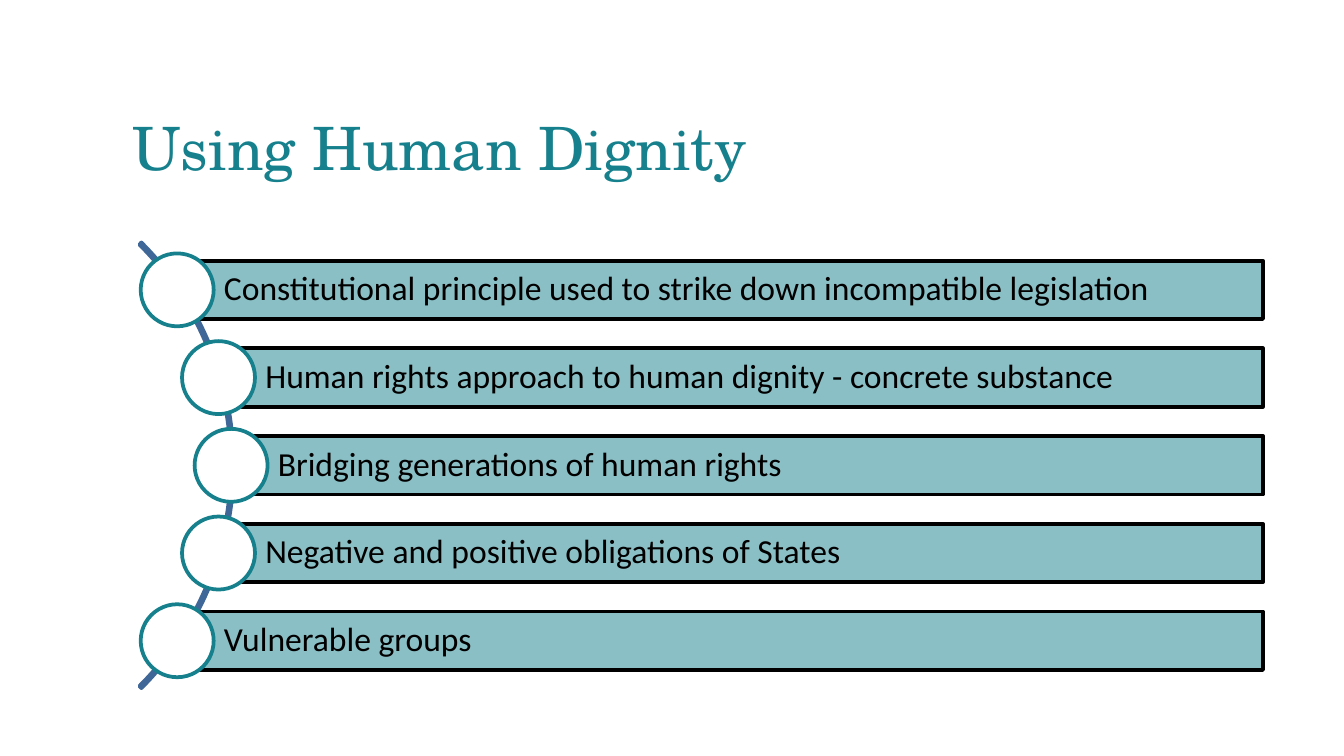
import math

from lxml import etree
from pptx import Presentation
from pptx.dml.color import RGBColor
from pptx.enum.shapes import MSO_SHAPE
from pptx.enum.text import MSO_ANCHOR, PP_ALIGN
from pptx.oxml.ns import qn
from pptx.util import Pt

ARC, BAR, CIRCLE = MSO_SHAPE.BLOCK_ARC, MSO_SHAPE.RECTANGLE, MSO_SHAPE.OVAL
LEFT, MIDDLE = PP_ALIGN.LEFT, MSO_ANCHOR.MIDDLE

COLORS = {"teal": "16818D", "blue": "3F6797", "black": "000000", "white": "FFFFFF"}
TITLE_FONT, BODY_FONT = "TeX Gyre Schola", "Calibri"
POINTS = [
    "Constitutional principle used to strike down incompatible legislation",
    "Human rights approach to human dignity - concrete substance",
    "Bridging generations of human rights",
    "Negative and positive obligations of States",
    "Vulnerable groups",
]


def color(name):
    return RGBColor.from_string(COLORS[name])


def set_font(paragraph, name, size, color_name):
    paragraph.font.name = name
    paragraph.font.size = Pt(size)
    paragraph.font.color.rgb = color(color_name)


def set_insets(frame, left, top, right, bottom):
    frame.margin_left, frame.margin_top = Pt(left), Pt(top)
    frame.margin_right, frame.margin_bottom = Pt(right), Pt(bottom)


def add_outlined(slide, kind, box, line, fill=None, opacity=None):
    """Add a preset shape with a 2 pt outline; opacity is a percentage."""
    shape = slide.shapes.add_shape(kind, *map(Pt, box))
    shape.shadow.inherit = False
    shape.line.color.rgb = color(line)
    shape.line.width = Pt(2)
    if fill is None:
        shape.fill.background()
        return shape
    shape.fill.solid()
    shape.fill.fore_color.rgb = color(fill)
    if opacity is not None:
        fill_color = shape._element.spPr.find(qn("a:solidFill"))[0]
        etree.SubElement(fill_color, qn("a:alpha"), val=str(opacity * 1000))
    return shape


def add_title(slide, box, text):
    frame = slide.shapes.add_textbox(*map(Pt, box)).text_frame
    frame.word_wrap = True
    set_insets(frame, 0, 0, 0, 0)
    paragraph = frame.paragraphs[0]
    paragraph.text = text
    paragraph.line_spacing = Pt(42)
    set_font(paragraph, TITLE_FONT, 32, "teal")


def add_bar(slide, box, text):
    bar = add_outlined(slide, BAR, box, "black", "teal", 50)
    frame = bar.text_frame
    frame.word_wrap = True
    frame.vertical_anchor = MIDDLE
    set_insets(frame, 25.1, 3.6, 3.6, 3.6)
    paragraph = frame.paragraphs[0]
    paragraph.text = text
    paragraph.alignment = LEFT
    paragraph.line_spacing = 0.9
    set_font(paragraph, BODY_FONT, 18, "black")


def add_curved_list(slide, box, texts):
    """Stack bars whose left ends and circles follow an arc centred on the box."""
    left, top, width, height = box
    arc_size, bar_height, circle_size = 337.6, 31.3, 39.1
    radius = arc_size / 2 - 1.4
    center_x = left - 118.6
    center_y = top + height / 2
    pitch = height / len(texts)

    arc_box = (center_x - arc_size / 2, center_y - arc_size / 2, arc_size, arc_size)
    arc = add_outlined(slide, ARC, arc_box, "blue")
    # Angles from 315 to 45 degrees, then the thickness
    for index, value in enumerate((189, 27, 0.0046)):
        arc.adjustments[index] = value

    for index, text in enumerate(texts):
        offset = (index - (len(texts) - 1) / 2) * pitch
        x = center_x + math.sqrt(radius ** 2 - offset ** 2)
        y = center_y + offset
        add_bar(slide, (x, y - bar_height / 2, left + width - x, bar_height), text)
        half = circle_size / 2
        circle_box = (x - half, y - half, circle_size, circle_size)
        add_outlined(slide, CIRCLE, circle_box, "teal", "white")


def main():
    presentation = Presentation()
    presentation.slide_width, presentation.slide_height = Pt(720), Pt(405)
    slide = presentation.slides.add_slide(presentation.slide_layouts[6])
    add_title(slide, (70.8, 55.5, 585, 38), "Using Human Dignity")
    add_curved_list(slide, (75, 131.8, 601.6, 235), POINTS)
    presentation.save("out.pptx")


if __name__ == "__main__":
    main()
